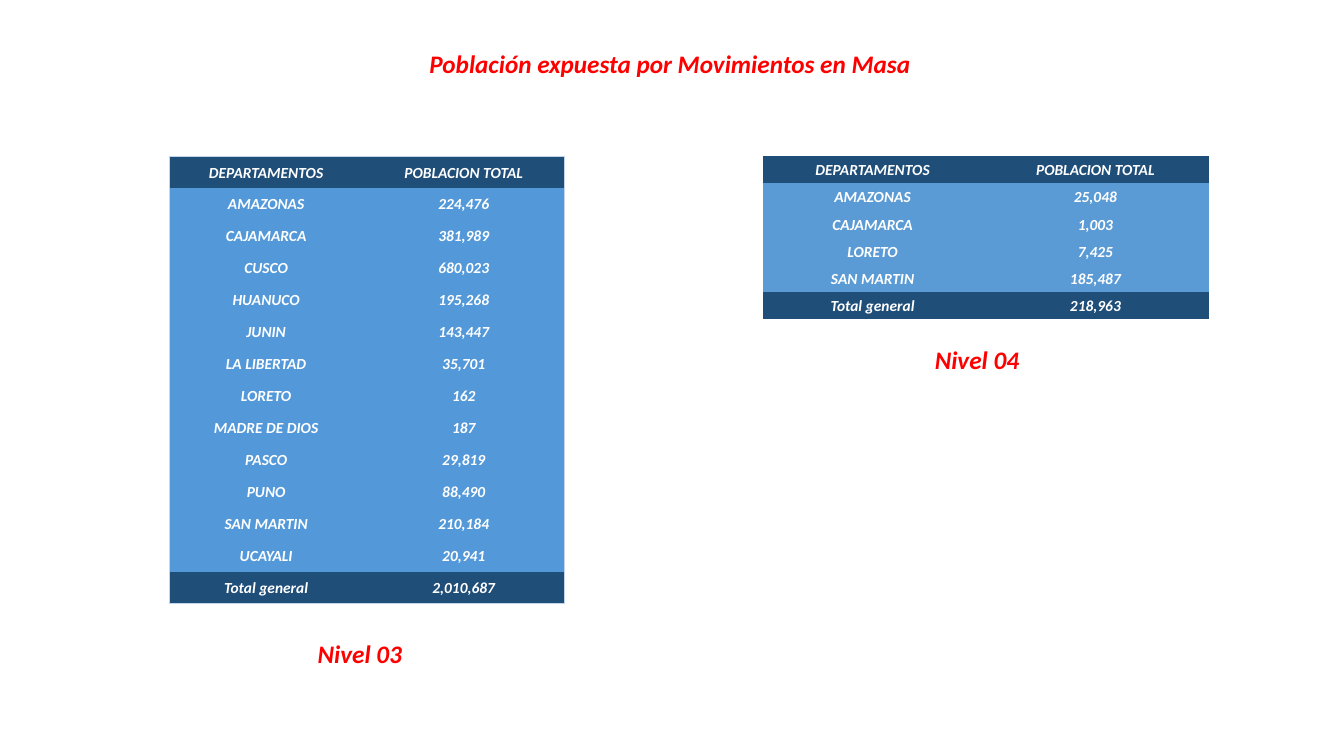
import pptx
import pptx.util
import pptx.dml.color
import pptx.enum.text
import pptx.oxml.ns
import lxml.etree
from dataclasses import dataclass
from pptx.util import Inches


@dataclass(frozen=True)
class Theme:
    font: str = "Calibri"
    heading_size: int = 18
    table_size: int = 11
    red: str = "FF0000"
    white: str = "FFFFFF"
    navy: str = "1F4E79"
    level_3_blue: str = "5399DA"
    level_4_blue: str = "5B9BD5"
    border: str = "C4D5EB"


theme = Theme()
qn = pptx.oxml.ns.qn
NO_STYLE = "{2D5ABB26-0587-4C30-8999-92F81FD0307C}"


def format_text(text_frame, text, size, color):
    text_frame.text = text
    text_frame.vertical_anchor = pptx.enum.text.MSO_ANCHOR.MIDDLE
    paragraph = text_frame.paragraphs[0]
    paragraph.alignment = pptx.enum.text.PP_ALIGN.CENTER
    font = paragraph.runs[0].font
    font.name = theme.font
    font.size = pptx.util.Pt(size)
    font.bold = font.italic = True
    font.color.rgb = pptx.dml.color.RGBColor.from_string(color)


def add_border(cell, sides):
    properties = cell._tc.get_or_add_tcPr()
    # Border lines come before the fill, in the order L, R, T, B
    for position, side in enumerate(sides):
        line = lxml.etree.Element(qn(f"a:ln{side}"), w=str(pptx.util.Pt(0.5)))
        fill = lxml.etree.SubElement(line, qn("a:solidFill"))
        lxml.etree.SubElement(fill, qn("a:srgbClr"), val=theme.border)
        properties.insert(position, line)


presentation = pptx.Presentation()
presentation.slide_width = Inches(13.33)
presentation.slide_height = Inches(7.5)
slide = presentation.slides.add_slide(presentation.slide_layouts[5])

# Title
title = slide.shapes.title
title.left, title.top = Inches(4.13), Inches(0.43)
title.width, title.height = Inches(5.03), Inches(0.4)
format_text(title.text_frame, "Población expuesta por Movimientos en Masa",
            theme.heading_size, theme.red)
title.text_frame.word_wrap = False
title.text_frame.auto_size = pptx.enum.text.MSO_AUTO_SIZE.NONE

# Level captions
for caption, left, top in [("Nivel 03", 3.02, 6.28), ("Nivel 04", 9.14, 3.37)]:
    text_box = slide.shapes.add_textbox(Inches(left), Inches(top), Inches(1.1), Inches(0.4))
    format_text(text_box.text_frame, caption, theme.heading_size, theme.red)
    text_box.text_frame.word_wrap = True

# Population by department
header = ("DEPARTAMENTOS", "POBLACION TOTAL")
level_3 = [
    header,
    ("AMAZONAS", "224,476"),
    ("CAJAMARCA", "381,989"),
    ("CUSCO", "680,023"),
    ("HUANUCO", "195,268"),
    ("JUNIN", "143,447"),
    ("LA LIBERTAD", "35,701"),
    ("LORETO", "162"),
    ("MADRE DE DIOS", "187"),
    ("PASCO", "29,819"),
    ("PUNO", "88,490"),
    ("SAN MARTIN", "210,184"),
    ("UCAYALI", "20,941"),
    ("Total general", "2,010,687"),
]
level_4 = [
    header,
    ("AMAZONAS", "25,048"),
    ("CAJAMARCA", "1,003"),
    ("LORETO", "7,425"),
    ("SAN MARTIN", "185,487"),
    ("Total general", "218,963"),
]

# Tables: rows, left, column widths, height, body fill, outer border
tables = [
    (level_3, 1.68, (1.92, 2), 4.44, theme.level_3_blue, True),
    (level_4, 7.57, (2.17, 2.25), 1.62, theme.level_4_blue, False),
]
for rows, left, widths, height, body_fill, bordered in tables:
    frame = slide.shapes.add_table(len(rows), 2, Inches(left), Inches(1.55),
                                   Inches(sum(widths)), Inches(height))
    table = frame.table
    table._tbl.tblPr.find(qn("a:tableStyleId")).text = NO_STYLE
    table.horz_banding = False
    for column, width in zip(table.columns, widths):
        column.width = Inches(width)

    last = len(rows) - 1
    for row_index, values in enumerate(rows):
        for column_index, value in enumerate(values):
            cell = table.cell(row_index, column_index)
            cell.margin_left = cell.margin_right = cell.margin_top = Inches(0.01)
            cell.margin_bottom = 0
            format_text(cell.text_frame, value, theme.table_size, theme.white)
            cell.vertical_anchor = pptx.enum.text.MSO_ANCHOR.MIDDLE
            cell.text_frame.word_wrap = True
            fill_color = theme.navy if row_index in (0, last) else body_fill
            cell.fill.solid()
            cell.fill.fore_color.rgb = pptx.dml.color.RGBColor.from_string(fill_color)
            if bordered:
                edge = {0: "T", last: "B"}.get(row_index, "")
                add_border(cell, "LR"[column_index] + edge)

presentation.save("out.pptx")
